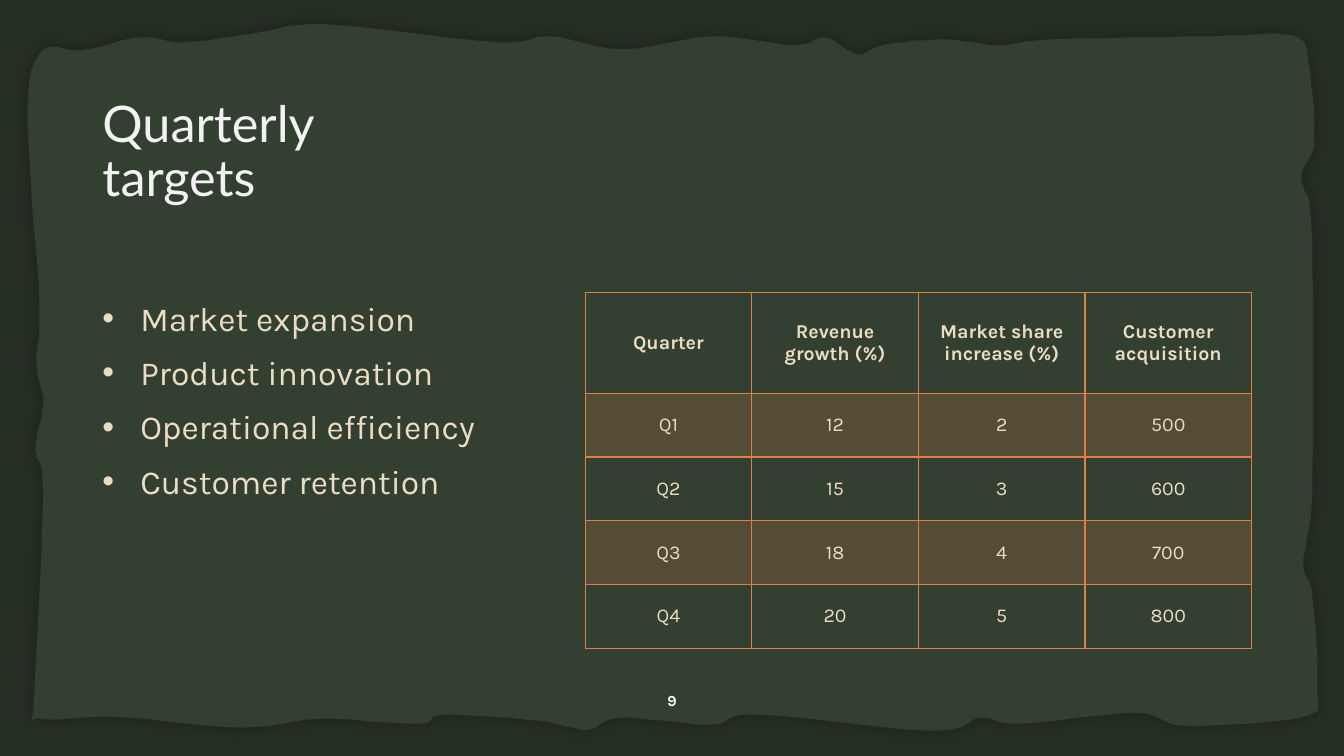
"""Build the quarterly targets slide with a bullet list and a table."""
from lxml import etree
from pptx import Presentation
from pptx.dml.color import RGBColor
from pptx.enum.shapes import MSO_SHAPE
from pptx.enum.text import MSO_ANCHOR, PP_ALIGN
from pptx.oxml.ns import qn
from pptx.util import Pt

RECTANGLE = MSO_SHAPE.RECTANGLE
TOP, MIDDLE = MSO_ANCHOR.TOP, MSO_ANCHOR.MIDDLE
LEFT, CENTER = PP_ALIGN.LEFT, PP_ALIGN.CENTER

COLORS = {
    "paper": "334031", "shade": "000000", "title": "F2F2F2",
    "text": "EBDDC3", "accent": "DD8047", "number": "FFFFFF",
}
BULLETS = ["Market expansion", "Product innovation",
           "Operational efficiency", "Customer retention"]
ROWS = [
    ["Quarter", "Revenue\vgrowth (%)", "Market share increase (%)", "Customer acquisition"],
    ["Q1", "12", "2", "500"],
    ["Q2", "15", "3", "600"],
    ["Q3", "18", "4", "700"],
    ["Q4", "20", "5", "800"],
]
HUNDREDTH_INCH = Pt(0.72)
PAPER_EDGE = [
    (1307, 682), (1302, 591), (1293, 561), (1301, 504), (1303, 409), (1303, 308),
    (1300, 210), (1291, 175), (1304, 140), (1298, 61), (1282, 35),
    (1203, 36), (1044, 39), (989, 45), (940, 39), (879, 44), (850, 54), (820, 37),
    (787, 45), (706, 36), (618, 49), (546, 36), (494, 42), (324, 24), (258, 32),
    (183, 42), (140, 37), (82, 50), (42, 50),
    (27, 113), (39, 298), (36, 361), (43, 400), (35, 445), (43, 490), (34, 691),
    (40, 713), (112, 711), (239, 722), (317, 713), (416, 718), (440, 709),
    (536, 715), (582, 724), (616, 712), (706, 719), (750, 709), (926, 725),
    (973, 712), (1012, 718), (1126, 707), (1177, 720), (1294, 711),
]


def paint(fill, color, opacity=100):
    fill.solid()
    fill.fore_color.rgb = RGBColor.from_string(COLORS[color])
    if opacity < 100:
        rgb = fill.fore_color._xFill.find(qn("a:srgbClr"))
        etree.SubElement(rgb, qn("a:alpha"), val=str(opacity * 1000))


def style(paragraph, size, color, font="Karla", bold=False, align=LEFT):
    paragraph.alignment = align
    for span in paragraph.runs:
        span.font.name = font
        span.font.size = Pt(size)
        span.font.bold = bold
        span.font.color.rgb = RGBColor.from_string(COLORS[color])


deck = Presentation()
deck.slide_width, deck.slide_height = Pt(960), Pt(540)
page = deck.slides.add_slide(deck.slide_layouts[1])
paint(page.background.fill, "paper")
title, body = page.shapes.title, page.placeholders[1]

shade = page.shapes.add_shape(RECTANGLE, 0, 0, deck.slide_width, deck.slide_height)
shade.shadow.inherit = False
paint(shade.fill, "shade", 25)

edge_points = []
count = len(PAPER_EDGE)
for index, start in enumerate(PAPER_EDGE):
    before = PAPER_EDGE[index - 1]
    end = PAPER_EDGE[(index + 1) % count]
    after = PAPER_EDGE[(index + 2) % count]
    for step in range(6):
        t = step / 6
        edge_points.append(tuple(
            b + t * (c - a) / 2 + t**2 * (a - 2.5 * b + 2 * c - d / 2)
            + t**3 * (1.5 * (b - c) + (d - a) / 2)
            for a, b, c, d in zip(before, start, end, after)))
builder = page.shapes.build_freeform(*edge_points[0], scale=HUNDREDTH_INCH)
builder.add_line_segments(edge_points[1:], close=True)
paper = builder.convert_to_shape()
paper.shadow.inherit = False
paint(paper.fill, "paper")
effects = paper.element.spPr.find(qn("a:effectLst"))
glow = etree.SubElement(effects, qn("a:outerShdw"), blurRad=str(Pt(10)), dist="0", dir="0")
glow_color = etree.SubElement(glow, qn("a:srgbClr"), val=COLORS["shade"])
etree.SubElement(glow_color, qn("a:alpha"), val="26000")
for shape in (shade, paper):
    shape.line.fill.background()
    title.element.addprevious(shape.element)

title.left, title.top, title.width, title.height = Pt(66), Pt(67), Pt(828), Pt(109)
title.text_frame.text = "Quarterly\vtargets"
title.text_frame.vertical_anchor = TOP
title.text_frame.paragraphs[0].line_spacing = 0.9
style(title.text_frame.paragraphs[0], 36, "title", "Lato")

body.left, body.top, body.width, body.height = Pt(66), Pt(209), Pt(323), Pt(155.5)
body.text_frame.text = "\n".join(BULLETS)
body.text_frame.vertical_anchor = TOP
for index, paragraph in enumerate(body.text_frame.paragraphs):
    paragraph.space_before = Pt(10 if index else 0)
    properties = paragraph._p.get_or_add_pPr()
    properties.set("marL", str(Pt(27)))
    properties.set("indent", str(Pt(-27)))
    etree.SubElement(properties, qn("a:buFont"), typeface="Arial")
    etree.SubElement(properties, qn("a:buChar"), char="•")
    style(paragraph, 24, "text")

table = page.shapes.add_table(5, 4, Pt(418), Pt(209), Pt(476), Pt(254)).table
table.first_row = table.horz_banding = False
for column in table.columns:
    column.width = Pt(119)
for row_index, values in enumerate(ROWS):
    table.rows[row_index].height = Pt(45.5 if row_index else 72)
    for column_index, value in enumerate(values):
        cell = table.cell(row_index, column_index)
        cell.text_frame.text = value
        cell.vertical_anchor = MIDDLE
        style(cell.text_frame.paragraphs[0], 14, "text", bold=row_index == 0, align=CENTER)
        if row_index % 2:
            paint(cell.fill, "accent", 20)
        else:
            cell.fill.background()
        for position, side in enumerate(("lnL", "lnR", "lnT", "lnB")):
            border = etree.Element(qn("a:" + side), w=str(Pt(1)))
            border_fill = etree.SubElement(border, qn("a:solidFill"))
            etree.SubElement(border_fill, qn("a:srgbClr"), val=COLORS["accent"])
            cell._tc.get_or_add_tcPr().insert(position, border)

number = page.shapes.add_textbox(Pt(458.5), Pt(486), Pt(43), Pt(29))
number.text_frame.word_wrap = True
number.text_frame.text = "9"
number.text_frame.vertical_anchor = MIDDLE
style(number.text_frame.paragraphs[0], 11, "number", bold=True, align=CENTER)

deck.save("out.pptx")
